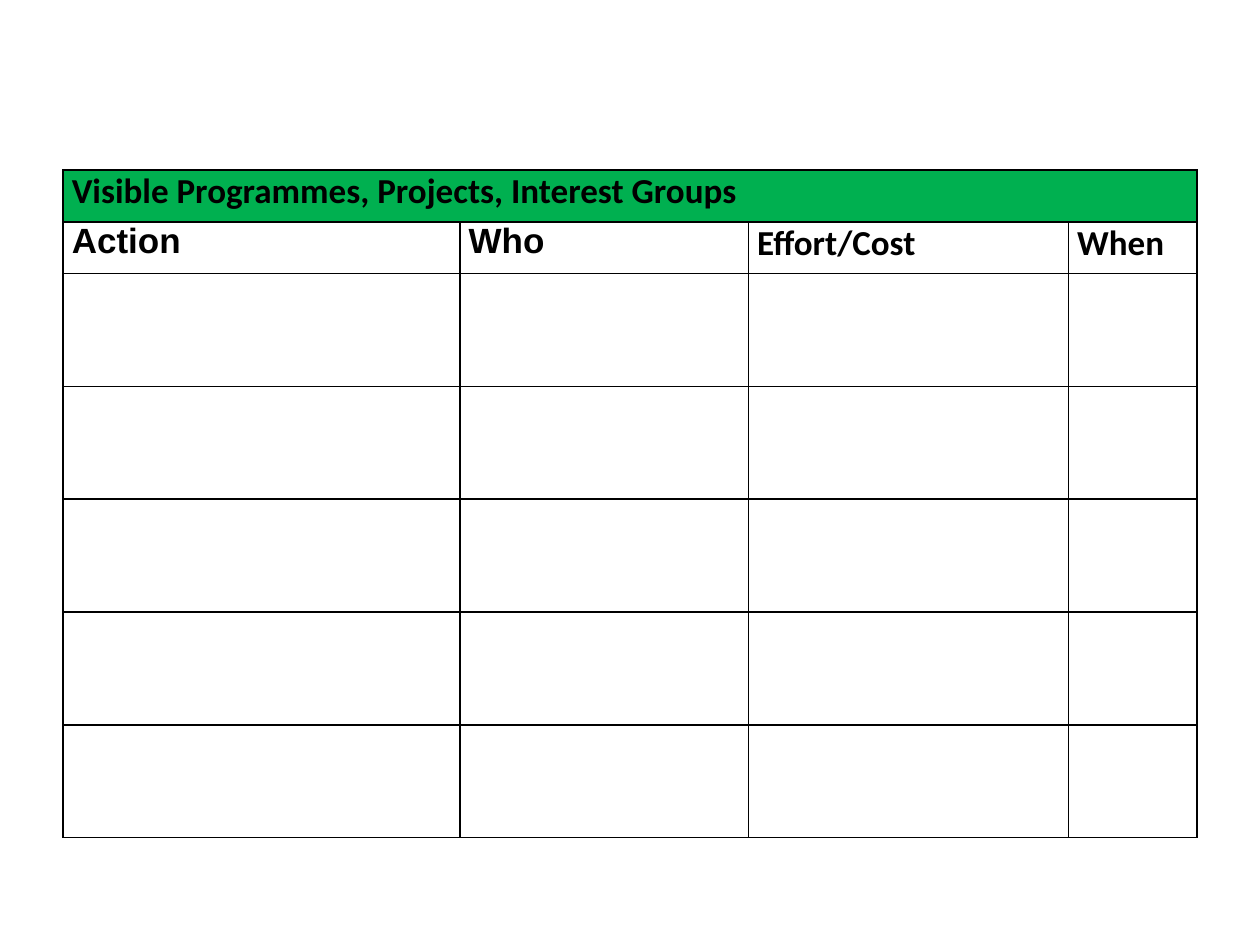
from lxml.etree import SubElement
from pptx import Presentation
from pptx.dml.color import RGBColor as RGB
from pptx.oxml.ns import qn
from pptx.util import Inches, Pt

GREEN = RGB(0x00, 0xB0, 0x50)
BLACK = RGB(0x00, 0x00, 0x00)
WHITE = RGB(0xFF, 0xFF, 0xFF)

BANNER = "Visible Programmes, Projects, Interest Groups"
HEADINGS = [("Action", "Arial"), ("Who", "Arial"), ("Effort/Cost", "Calibri"), ("When", "Calibri")]
COL_SHARES = [0.35, 0.2544, 0.2822, 0.1134]
HEAD_ROWS, ACTION_ROWS = 2, 5
HEAD_SHARE = 0.0774
ACTION_SHARE = (1 - HEAD_ROWS * HEAD_SHARE) / ACTION_ROWS
MARGINS = {"margin_left": Inches(0.07), "margin_right": Inches(0.07), "margin_top": 0, "margin_bottom": 0}
HEAD_FONT = {"size": Pt(20), "bold": True}


def set_attrs(obj, values):
    for name, value in values.items():
        setattr(obj, name, value)


def add_borders(cell):
    tc_pr = cell._tc.get_or_add_tcPr()
    for i, side in enumerate(("a:lnL", "a:lnR", "a:lnT", "a:lnB")):
        ln = tc_pr.makeelement(qn(side), {"w": str(Pt(1))})
        fill = SubElement(ln, qn("a:solidFill"))
        SubElement(fill, qn("a:srgbClr"), val=str(BLACK))
        tc_pr.insert(i, ln)


def write_heading(cell, text, font):
    set_attrs(cell, MARGINS)
    r = cell.text_frame.paragraphs[0].add_run()
    r.text = text
    set_attrs(r.font, {**HEAD_FONT, "name": font})
    r.font.color.rgb = BLACK


def add_action_table(slide, left, top, width, height):
    shares = [HEAD_SHARE] * HEAD_ROWS + [ACTION_SHARE] * ACTION_ROWS
    table = slide.shapes.add_table(len(shares), len(COL_SHARES), left, top, width, height).table
    set_attrs(table, {"first_row": False, "horz_banding": False})
    for col, share in zip(table.columns, COL_SHARES):
        col.width = int(width * share)
    for row, share in zip(table.rows, shares):
        row.height = int(height * share)
    for i, row in enumerate(table.rows):
        for cell in row.cells:
            cell.fill.solid()
            cell.fill.fore_color.rgb = GREEN if i == 0 else WHITE
            add_borders(cell)
    table.cell(0, 0).merge(table.cell(0, len(COL_SHARES) - 1))
    write_heading(table.cell(0, 0), BANNER, "Calibri")
    for col, (text, font) in enumerate(HEADINGS):
        write_heading(table.cell(1, col), text, font)


def main():
    prs = Presentation()
    set_attrs(prs, {"slide_width": Inches(10), "slide_height": Inches(7.5)})
    w, h = prs.slide_width, prs.slide_height
    slide = prs.slides.add_slide(prs.slide_layouts[6])
    add_action_table(slide, int(w * 0.05), int(h * 0.18), int(w * 0.9), int(h * 0.7067))
    prs.save("out.pptx")


if __name__ == "__main__":
    main()
